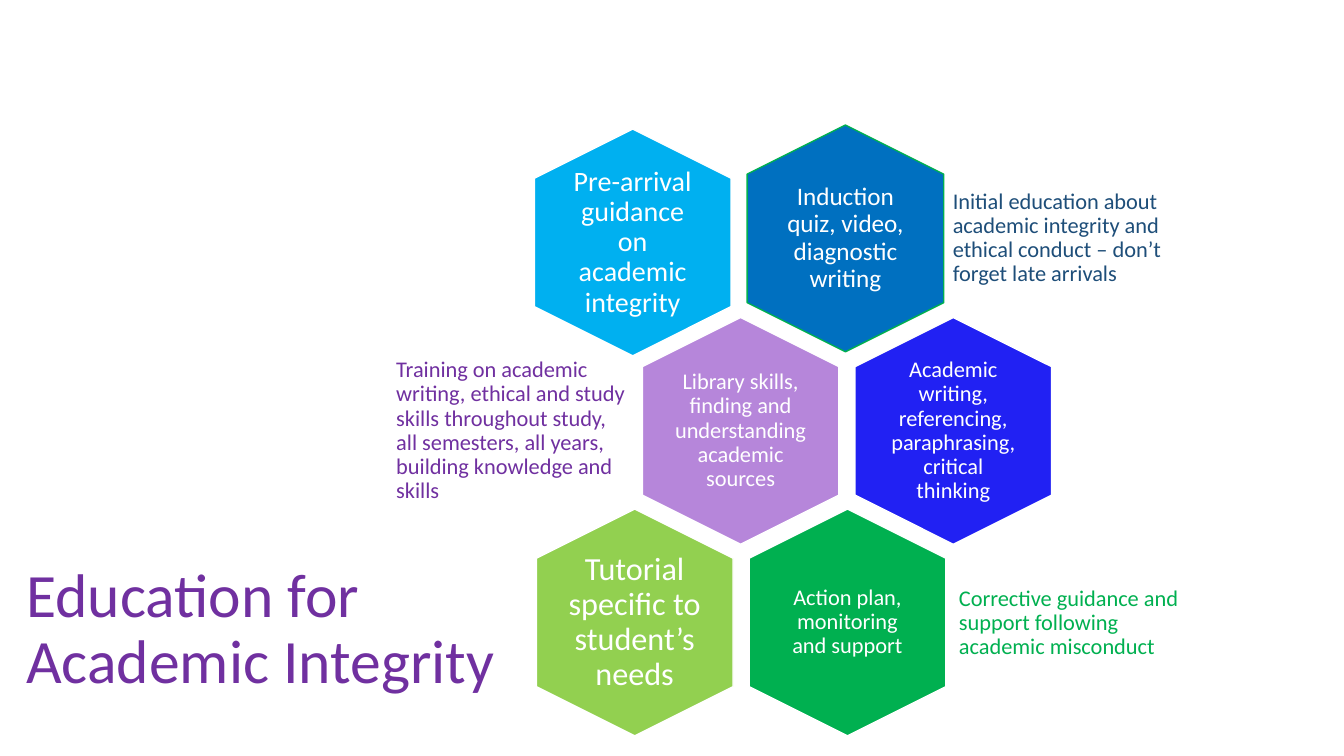
from pptx import Presentation
from pptx.dml.color import RGBColor
from pptx.enum.shapes import MSO_SHAPE
from pptx.enum.text import MSO_ANCHOR, PP_ALIGN
from pptx.util import Emu, Pt

PX = 9144  # 100 px to the inch
WHITE = RGBColor(0xFF, 0xFF, 0xFF)
PURPLE = RGBColor(0x70, 0x30, 0xA0)
LILAC = RGBColor(0xB6, 0x86, 0xDA)
NAVY = RGBColor(0x1E, 0x4E, 0x79)
BLUE = RGBColor(0x00, 0x70, 0xC0)
SKY = RGBColor(0x00, 0xB0, 0xF0)
VIVID_BLUE = RGBColor(0x21, 0x21, 0xF3)
GREEN = RGBColor(0x00, 0xB0, 0x50)
LIME = RGBColor(0x92, 0xD0, 0x50)

HEX_W, HEX_H = 225, 195
LABEL_W, LABEL_H = 135, 155
NOTE_H = 135


def px(*lengths):
    return [Emu(length * PX) for length in lengths]


def write(frame, text, size, color, align, inset_x, inset_y):
    frame.word_wrap = True
    frame.vertical_anchor = MSO_ANCHOR.MIDDLE
    frame.margin_left = frame.margin_right = Emu(inset_x * PX)
    frame.margin_top = frame.margin_bottom = Emu(inset_y * PX)
    paragraph = frame.paragraphs[0]
    paragraph.alignment = align
    paragraph.line_spacing = 0.9
    run = paragraph.add_run()
    run.text = text
    run.font.name = "Calibri"
    run.font.size = Pt(size)
    run.font.color.rgb = color


prs = Presentation()
prs.slide_width, prs.slide_height = px(1333, 750)
slide = prs.slides.add_slide(prs.slide_layouts.get_by_name("Title Only"))

title = slide.shapes.title
title.left, title.top, title.width, title.height = px(16, 553, 598, 145)
write(title.text_frame, "Education for Academic Integrity", 44, PURPLE,
      PP_ALIGN.LEFT, 10, 5)

# left, top, fill, outline, text size, text inset, text
stages = [
    (726, 139, BLUE, GREEN, 18, 7, "Induction quiz, video, diagnostic writing"),
    (515, 143, SKY, WHITE, 20, 0, "Pre-arrival guidance on academic integrity"),
    (622, 330, LILAC, WHITE, 16, 0,
     "Library skills, finding and understanding academic sources"),
    (833, 330, VIVID_BLUE, WHITE, 16, 0,
     "Academic writing, referencing, paraphrasing, critical thinking"),
    (728, 520, GREEN, WHITE, 16, 7, "Action plan, monitoring and support"),
    (517, 520, LIME, WHITE, 23, 0, "Tutorial specific to student’s needs"),
]
for left, top, fill, outline, size, inset, text in stages:
    hexagon = slide.shapes.add_shape(MSO_SHAPE.HEXAGON, *px(left, top, HEX_W, HEX_H))
    hexagon.adjustments[0] = 0.25
    hexagon.rotation = 90
    hexagon.shadow.inherit = False
    hexagon.fill.solid()
    hexagon.fill.fore_color.rgb = fill
    hexagon.line.color.rgb = outline
    hexagon.line.width = Pt(1)
    # The label is a separate box so that it stays upright
    label = slide.shapes.add_textbox(*px(left + (HEX_W - LABEL_W) // 2,
                                         top + (HEX_H - LABEL_H) // 2,
                                         LABEL_W, LABEL_H))
    write(label.text_frame, text, size, WHITE, PP_ALIGN.CENTER, inset, inset)

# left, top, width, colour, text
notes = [
    (938, 169, 257, NAVY,
     "Initial education about academic integrity and ethical conduct – "
     "don’t forget late arrivals"),
    (386, 360, 243, PURPLE,
     "Training on academic writing, ethical and study skills throughout study, "
     "all semesters, all years, building knowledge and skills"),
    (944, 551, 251, GREEN,
     "Corrective guidance and support following academic misconduct"),
]
for left, top, width, color, text in notes:
    note = slide.shapes.add_textbox(*px(left, top, width, NOTE_H))
    write(note.text_frame, text, 16, color, PP_ALIGN.LEFT, 7, 7)

prs.save("out.pptx")
